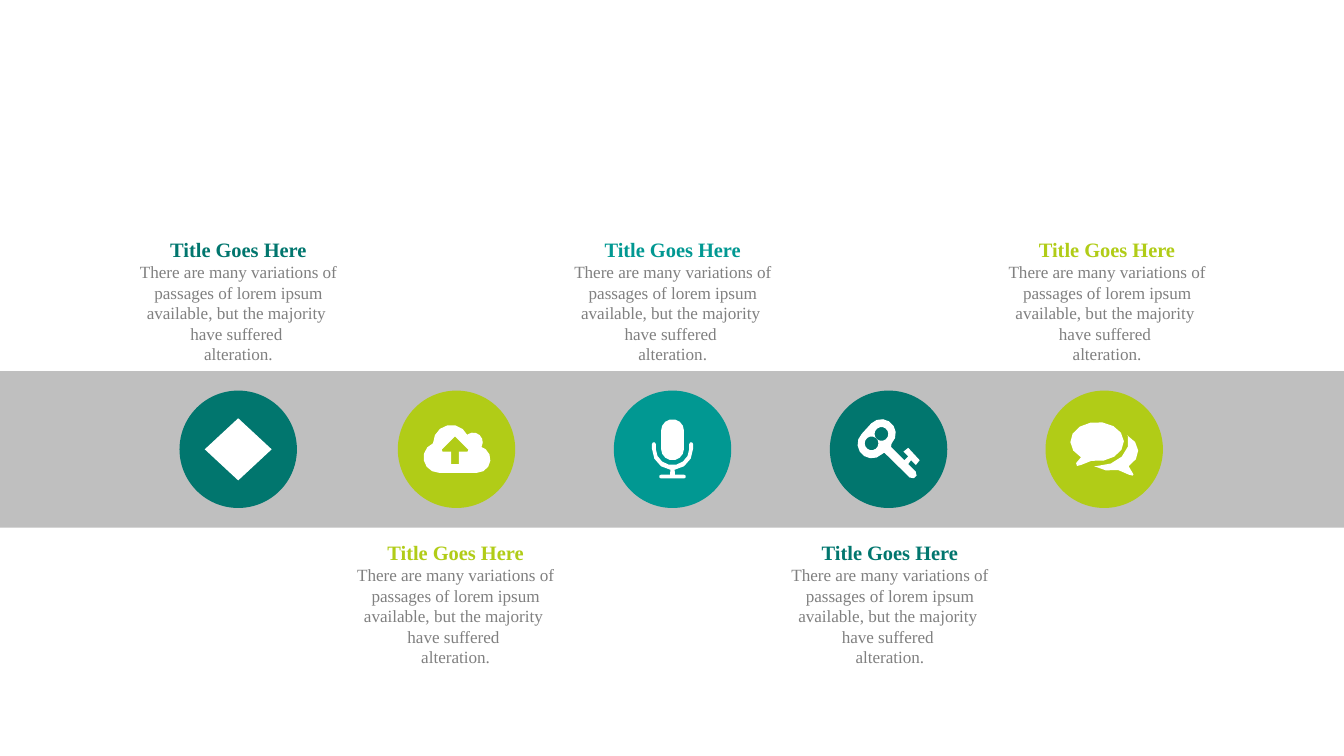
from math import cos, radians, sin

from pptx import Presentation
from pptx.dml.color import RGBColor
from pptx.enum.shapes import MSO_SHAPE
from pptx.enum.text import MSO_AUTO_SIZE, PP_ALIGN
from pptx.util import Cm, Pt

RECT, OVAL = MSO_SHAPE.RECTANGLE, MSO_SHAPE.OVAL
CENTER, GROW = PP_ALIGN.CENTER, MSO_AUTO_SIZE.SHAPE_TO_FIT_TEXT

THEME = {
    "dark": RGBColor(0x01, 0x76, 0x6E),
    "teal": RGBColor(0x01, 0x98, 0x92),
    "lime": RGBColor(0xB1, 0xCC, 0x17),
    "band": RGBColor(0xBF, 0xBF, 0xBF),
    "icon": RGBColor(0xFF, 0xFF, 0xFF),
    "body": RGBColor(0x80, 0x80, 0x80),
    "font": "Times New Roman",
    "title_size": Pt(15.4),
    "body_size": Pt(12.9),
}

BOX = [[(0, -32.5), (35, 0), (0, 32.5), (-35, 0)]]
CLOUD = [
    [(-18.5, 8.5, 16, 16, 90, 247), (-5.5, -6.5, 19, 19, 180, 335),
     (17.5, -7.5, 10, 10, 235, 390), (21.5, 10.5, 14, 14, 282, 450)],
    [(-1.5, -13.5), (-15.5, 0.5), (-14.5, 2.5), (-5.5, 2.5), (-5.5, 15.5),
     (2.5, 15.5), (2.5, 2.5), (11.5, 2.5), (12.5, 0.5)],
]
MICROPHONE = [
    [(0, -19.5, 12, 12, 180, 360), (0, -0.5, 12, 12, 0, 180)],
    [(19.5, -5.5, 2, 2, 180, 360), (0, -0.5, 21.5, 22, 0, 84),
     (2.5, 26.5), (12, 28.5, 2, 2, 270, 450), (-12, 28.5, 2, 2, 90, 270),
     (-2.5, 26.5), (0, -0.5, 21.5, 22, 96, 180),
     (-19.5, -5.5, 2, 2, 180, 360), (0, -0.5, 17.5, 17, 180, 0)],
]
KEY = [
    [(-17.5, -5.5, 15, 15, 45, 225), (-7.5, -16.5, 15, 15, 225, 405),
     (2.5, -2.5), (16.5, 11.5), (20.5, 7.5), (15.5, 2.5), (20.5, -1.5),
     (32.5, 11.5), (28.5, 16.5), (23.5, 11.5), (20.5, 15.5), (28.5, 23.5),
     (25, 26.5, 4.5, 4, 320, 490), (-4.5, 3.5)],
    [(-7.5, -16, 7.2, 7.2, 0, 360)],
    [(-17.8, -6.2, 7.2, 7.2, 0, 360)],
]
CHAT = [
    [(-7.5, -8, 28, 20.5, 127, 462), (-24.5, 16.5), (-28.5, 17.5), (-29.5, 14.5)],
    [(7.5, 2, 28, 20.5, -54, 50), (29.5, 24.5), (30.5, 26.5), (29.5, 27.5),
     (25.5, 26.5), (7.5, 2, 28, 20.5, 75, 130), (-7.5, -8.5, 33, 26, 90, -13)],
]

STEPS = [
    (6.33, "dark", BOX),
    (12.13, "lime", CLOUD),
    (17.87, "teal", MICROPHONE),
    (23.61, "dark", KEY),
    (29.34, "lime", CHAT),
]
TITLE = "Title Goes Here"
BODY = [
    "There are many variations of passages of lorem ipsum available, but the majority ",
    "have suffered ",
    "alteration.",
]
CENTER_Y, DIAMETER, ICON_UNIT = 11.94, 3.12, 0.0254
TEXT_LEFT, TEXT_PITCH, TEXT_WIDTH, TEXT_HEIGHT = 3.44, 5.77, 5.79, 3.4
TEXT_TOPS = (6.3, 14.35)


def paint(shape, color):
    shape.shadow.inherit = False
    shape.fill.solid()
    shape.fill.fore_color.rgb = color
    shape.line.fill.background()


def outline(contour, cx, cy):
    points = []
    for part in contour:
        if len(part) == 2:
            points.append(part)
            continue
        x, y, rx, ry, start, end = part
        count = max(2, round(abs(end - start) / (60 if rx < 5 else 26)))
        for step in range(count + 1):
            a = radians(start + (end - start) * step / count)
            points.append((x + rx * cos(a), y + ry * sin(a)))
    return [(Cm(cx + x * ICON_UNIT), Cm(cy + y * ICON_UNIT)) for x, y in points]


prs = Presentation()
prs.slide_width, prs.slide_height = Cm(35.71), Cm(20.09)
s = prs.slides.add_slide(prs.slide_layouts[6])

band = s.shapes.add_shape(RECT, 0, Cm(9.86), prs.slide_width, Cm(4.16))
paint(band, THEME["band"])

for cx, color, icon in STEPS:
    circle = s.shapes.add_shape(OVAL, Cm(cx - DIAMETER / 2), Cm(CENTER_Y - DIAMETER / 2),
                                Cm(DIAMETER), Cm(DIAMETER))
    paint(circle, THEME[color])

    first, *others = [outline(contour, cx, CENTER_Y) for contour in icon]
    fb = s.shapes.build_freeform(*first[0])
    fb.add_line_segments(first[1:])
    for points in others:
        fb.move_to(*points[0])
        fb.add_line_segments(points[1:])
    paint(fb.convert_to_shape(), THEME["icon"])

for i, (cx, color, icon) in enumerate(STEPS):
    sp = s.shapes.add_textbox(Cm(TEXT_LEFT + i * TEXT_PITCH), Cm(TEXT_TOPS[i % 2]),
                              Cm(TEXT_WIDTH), Cm(TEXT_HEIGHT))
    tf = sp.text_frame
    frame_format = {"word_wrap": True, "auto_size": GROW, "margin_left": 0,
                    "margin_right": 0, "margin_top": 0, "margin_bottom": 0}
    for name, value in frame_format.items():
        setattr(tf, name, value)
    p = tf.paragraphs[0]
    p.alignment = CENTER
    p.space_before = Pt(2)
    title_format = {"name": THEME["font"], "size": THEME["title_size"], "bold": True}
    body_format = {"name": THEME["font"], "size": THEME["body_size"], "bold": False}
    lines = [(TITLE, title_format, THEME[color])]
    lines += [(text, body_format, THEME["body"]) for text in BODY]
    for n, (text, font_format, rgb) in enumerate(lines):
        if n:
            p.add_line_break()
        r = p.add_run()
        r.text = text
        r.font.color.rgb = rgb
        for name, value in font_format.items():
            setattr(r.font, name, value)

prs.save("out.pptx")
